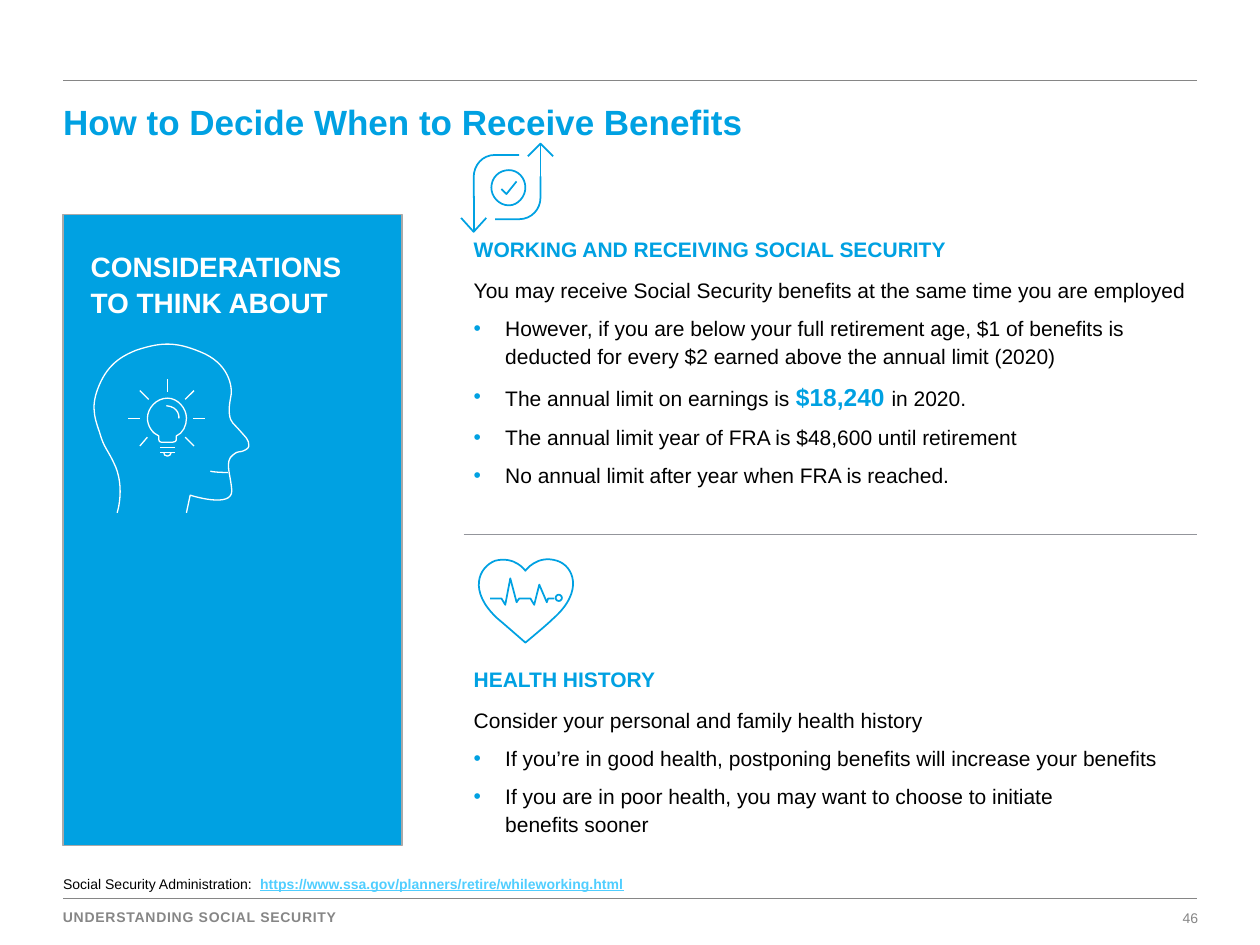
from lxml.etree import SubElement
from pptx import Presentation
from pptx.dml.color import RGBColor
from pptx.enum.shapes import MSO_CONNECTOR, MSO_SHAPE
from pptx.enum.text import MSO_ANCHOR, PP_ALIGN
from pptx.oxml.ns import qn
from pptx.util import Inches, Pt

BLUE, WHITE, BLACK, GRAY = "00A1E2", "FFFFFF", "000000", "868686"
NO_BREAK_SPACE = chr(160)

HEAD = """M 1.81 3.75 C 1.81 3.75 1.71 3.75 1.67 3.74 M 0.93 4.07 C 0.93 4.07 0.99 3.89 0.92 3.71
C 0.85 3.55 0.83 3.57 0.79 3.43 C 0.74 3.29 0.72 3.2 0.8 3.03 C 0.88 2.86 1.01 2.81 1.08 2.78
C 1.29 2.71 1.41 2.71 1.63 2.81 C 1.83 2.91 1.85 3.09 1.83 3.16 C 1.81 3.26 1.82 3.33 1.85 3.36
C 1.89 3.4 1.95 3.47 1.95 3.47 C 1.95 3.47 2.01 3.54 1.95 3.57 C 1.89 3.6 1.9 3.57 1.85 3.61
C 1.78 3.66 1.83 3.76 1.84 3.89 C 1.85 4.04 1.51 3.93 1.51 3.93 C 1.48 4.07 1.48 4.07 1.48 4.07"""
BULB = """M 1.26 3.46 C 1.26 3.49 1.26 3.49 1.26 3.49 C 1.26 3.5 1.27 3.51 1.28 3.51
C 1.37 3.51 1.37 3.51 1.37 3.51 C 1.39 3.51 1.4 3.5 1.4 3.49 C 1.4 3.46 1.4 3.46 1.4 3.46
C 1.4 3.46 1.4 3.46 1.4 3.46 C 1.45 3.44 1.48 3.38 1.48 3.32 C 1.48 3.24 1.41 3.16 1.33 3.16
C 1.24 3.16 1.17 3.24 1.17 3.32 C 1.17 3.38 1.21 3.44 1.26 3.46"""
BULB_TIP = "M 1.3 3.59 C 1.3 3.61 1.31 3.62 1.33 3.62 C 1.34 3.62 1.36 3.61 1.36 3.59"
BULB_GLINT = "M 1.42 3.32 C 1.42 3.32 1.43 3.23 1.32 3.22"
RAYS = [
    (1.53, 3.32, 1.63, 3.32), (1.02, 3.32, 1.11, 3.32), (1.33, 3.01, 1.33, 3.11),
    (1.54, 3.1, 1.47, 3.17), (1.11, 3.1, 1.18, 3.17), (1.54, 3.54, 1.47, 3.47),
    (1.11, 3.54, 1.17, 3.47),
]
BULB_BASE = [(1.39, 3.55, 1.27, 3.55), (1.39, 3.59, 1.27, 3.59)]
ARROWS = """M 4.29 1.14 C 4.29 1.41 4.29 1.41 4.29 1.41 M 4.39 1.24 C 4.29 1.14 4.29 1.14 4.29 1.14
C 4.19 1.24 4.19 1.24 4.19 1.24 M 4.29 1.4 C 4.29 1.57 4.29 1.57 4.29 1.57
C 4.29 1.66 4.22 1.74 4.12 1.74 C 3.93 1.74 3.93 1.74 3.93 1.74
M 3.76 1.84 C 3.76 1.56 3.76 1.56 3.76 1.56 M 3.66 1.73 C 3.76 1.84 3.76 1.84 3.76 1.84
C 3.86 1.73 3.86 1.73 3.86 1.73 M 3.76 1.57 C 3.76 1.41 3.76 1.41 3.76 1.41
C 3.76 1.31 3.83 1.23 3.93 1.23 C 4.12 1.23 4.12 1.23 4.12 1.23"""
CHECK = """M 3.98 1.5 C 4.02 1.54 4.02 1.54 4.02 1.54 C 4.1 1.44 4.1 1.44 4.1 1.44
M 4.17 1.49 C 4.17 1.56 4.11 1.63 4.04 1.63 C 3.96 1.63 3.9 1.56 3.9 1.49
C 3.9 1.41 3.96 1.35 4.04 1.35 C 4.11 1.35 4.17 1.41 4.17 1.49"""
PULSE = """M 3.89 4.75 L 3.98 4.75 L 4.01 4.8 L 4.05 4.59 L 4.1 4.78 L 4.12 4.75 L 4.21 4.75
L 4.24 4.8 L 4.28 4.64 L 4.34 4.78 L 4.35 4.75 L 4.4 4.75"""
HEART = """M 4.17 5.1 C 4.17 5.1 4.34 4.96 4.39 4.91 C 4.64 4.69 4.55 4.49 4.42 4.45
C 4.26 4.4 4.17 4.53 4.17 4.53 C 4.17 4.53 4.09 4.41 3.93 4.45
C 3.8 4.5 3.71 4.69 3.95 4.91 C 4.01 4.96 4.17 5.1 4.17 5.1"""

WORKING = [
    ["However, if you are below your full retirement age, $1 of benefits is deducted "
     "for every $2 earned above the annual limit (2020)"],
    ["The annual limit on earnings is ", ("$18,240 ", dict(size=14, color=BLUE, bold=True)), "in 2020."],
    ["The annual limit year of FRA is $48,600 until retirement"],
    ["No annual limit after year when FRA is reached."],
]
HEALTH = [
    ["If you’re in good health, postponing benefits will increase your benefits"],
    [f"If you are in poor health, you may want to choose to initiate benefits{NO_BREAK_SPACE}sooner"],
]


def rgb(value):
    """Return the colour for a hex string."""
    return RGBColor.from_string(value)


def add_text(paragraph, text, size=12, color=BLACK, bold=False, underline=False, spacing=None):
    """Append a formatted run to a paragraph."""
    run = paragraph.add_run()
    run.text = text
    font = run.font
    font.name, font.size, font.bold = "Arial", Pt(size), bold
    font.color.rgb = rgb(color)
    if underline:
        font.underline = True
    if spacing:
        run._r.get_or_add_rPr().set("spc", str(round(spacing * 100)))


def add_bullet(paragraph):
    """Give a paragraph a blue bullet with a hanging indent."""
    properties = paragraph._p.get_or_add_pPr()
    properties.set("marL", str(Inches(0.25)))
    properties.set("indent", str(-Inches(0.25)))
    color = SubElement(properties, qn("a:buClr"))
    SubElement(color, qn("a:srgbClr"), val=BLUE)
    SubElement(properties, qn("a:buFont"), typeface="Arial")
    SubElement(properties, qn("a:buChar"), char="•")


def read_outline(commands):
    """Turn M, L and C commands into pairs of letter and points."""
    result, tokens = [], iter(commands.split())
    for letter in tokens:
        count = 3 if letter == "C" else 1
        result.append((letter, [tuple(Inches(float(next(tokens))) for _ in "xy") for _ in range(count)]))
    return result


class SlideBuilder:
    """Hold the current slide and draw elements in its style."""

    def __init__(self, slide):
        """Keep the slide to draw on."""
        self.slide = slide
        self.shapes = slide.shapes

    def start_group(self):
        """Send the next elements to a new group."""
        self.shapes = self.slide.shapes.add_group_shape().shapes

    def end_group(self):
        """Send the next elements to the slide."""
        self.shapes = self.slide.shapes

    def frame(self, shape, insets=(0, 0, 0, 0), anchor=MSO_ANCHOR.TOP, wrap=True):
        """Set the text frame layout and return its first paragraph."""
        frame = shape.text_frame
        frame.margin_left, frame.margin_top, frame.margin_right, frame.margin_bottom = map(Inches, insets)
        frame.vertical_anchor, frame.word_wrap = anchor, wrap
        return frame.paragraphs[0]

    def title(self, text, *box):
        """Place and fill the title placeholder."""
        shape = self.slide.shapes.title
        shape.left, shape.top, shape.width, shape.height = map(Inches, box)
        paragraph = self.frame(shape)
        paragraph.alignment = PP_ALIGN.LEFT
        add_text(paragraph, text, size=20, color=BLUE, bold=True)

    def text_box(self, *box, **layout):
        """Add a text box and return its first paragraph."""
        return self.frame(self.shapes.add_textbox(*map(Inches, box)), **layout)

    def line(self, *ends, color=GRAY, width=1):
        """Add a straight line."""
        connector = self.shapes.add_connector(MSO_CONNECTOR.STRAIGHT, *map(Inches, ends))
        connector.line.color.rgb, connector.line.width = rgb(color), Pt(width)
        SubElement(connector._element.spPr, qn("a:effectLst"))

    def style(self, shape, fill, color, width):
        """Set fill and outline without a shadow."""
        shape.shadow.inherit = False
        if fill:
            shape.fill.solid()
            shape.fill.fore_color.rgb = rgb(fill)
        else:
            shape.fill.background()
        shape.line.color.rgb, shape.line.width = rgb(color), Pt(width)

    def shape(self, kind, *box, fill=None, color=BLUE, width=1):
        """Add a preset shape."""
        self.style(self.shapes.add_shape(kind, *map(Inches, box)), fill, color, width)

    def outline(self, commands, color=BLUE, width=1):
        """Add an unfilled freeform with true curves."""
        (_, [start]), *steps = read_outline(commands)
        builder = self.shapes.build_freeform(*start)
        for letter, points in steps:
            if letter == "M":
                builder.move_to(*points[0])
            else:
                builder.add_line_segments(points[-1:], close=False)
        shape = builder.convert_to_shape()
        segments = list(shape._element.iter(qn("a:lnTo")))
        drawn = [step for step in steps if step[0] != "M"]
        for segment, (letter, points) in zip(segments, drawn):
            if letter == "C":
                segment.tag = qn("a:cubicBezTo")
                segment.clear()
                for x, y in points:
                    SubElement(segment, qn("a:pt"), x=str(x - shape.left), y=str(y - shape.top))
        self.style(shape, None, color, width)

    def section(self, top, height, heading, lead, bullets):
        """Add a heading, a lead sentence and its bullets."""
        paragraph = self.text_box(3.71, top, 5.79, height, insets=(0.05, 0, 0.05, 0.05))
        frame = paragraph._parent
        paragraph.line_spacing = 1.2
        add_text(paragraph, heading, color=BLUE, bold=True)
        for index, parts in enumerate([[lead], *bullets]):
            paragraph = frame.add_paragraph()
            paragraph.space_before, paragraph.line_spacing = Pt(6), 1.1 if index else 1.2
            if index:
                add_bullet(paragraph)
            for part in parts:
                text, options = (part, {}) if isinstance(part, str) else part
                add_text(paragraph, text, **options)


def main():
    """Build and save the slide."""
    presentation = Presentation()
    presentation.slide_width, presentation.slide_height = Inches(10), Inches(7.5)
    builder = SlideBuilder(presentation.slides.add_slide(presentation.slide_layouts[5]))
    thin_white = dict(color=WHITE, width=0.75)

    for y in (0.64, 7.13):
        builder.line(0.5, y, 9.5, y)
    number = builder.text_box(9.37, 7.22, 0.14, 0.13, wrap=False)
    number.alignment = PP_ALIGN.RIGHT
    add_text(number, "46", size=8, color=GRAY)
    footer = builder.text_box(0.5, 7.21, 3.1, 0.15)
    add_text(footer, "UNDERSTANDING SOCIAL SECURITY", size=8, color=GRAY, bold=True, spacing=0.4)
    builder.title("How to Decide When to Receive Benefits", 0.5, 0.8, 8.99, 0.34)
    origin = builder.text_box(0.5, 6.78, 8.99, 0.32, insets=(0, 0, 0, 0.02), anchor=MSO_ANCHOR.BOTTOM)
    origin.line_spacing = 0.9
    add_text(origin, "Social Security Administration:  ", size=8)
    add_text(origin, "https://www.ssa.gov/planners/retire/whileworking.html",
             size=8, color="50CEFF", bold=True, underline=True)

    builder.shape(MSO_SHAPE.RECTANGLE, 0.5, 1.7, 2.69, 5.01, fill=BLUE, color="A9A9A9", width=0.75)
    panel = builder.text_box(0.72, 1.95, 2.25, 0.85)
    panel.line_spacing, panel.space_after = 1.1, Pt(3)
    add_text(panel, "CONSIDERATIONS ", size=16, color=WHITE, bold=True)
    panel.add_line_break()
    add_text(panel, "TO THINK ABOUT", size=16, color=WHITE, bold=True)

    builder.start_group()
    for commands in (HEAD, BULB_TIP):
        builder.outline(commands, **thin_white)
    for ends in RAYS:
        builder.line(*ends, **thin_white)
    for commands in (BULB, BULB_GLINT):
        builder.outline(commands, **thin_white)
    for ends in BULB_BASE:
        builder.line(*ends, **thin_white)
    builder.end_group()

    builder.section(1.84, 2.24, "WORKING AND RECEIVING SOCIAL SECURITY",
                    "You may receive Social Security benefits at the same time you are employed", WORKING)
    builder.start_group()
    builder.outline(ARROWS)
    builder.outline(CHECK)
    builder.start_group()
    builder.outline(PULSE)
    builder.shape(MSO_SHAPE.OVAL, 4.41, 4.72, 0.05, 0.05)
    builder.outline(HEART)
    builder.end_group()
    builder.section(5.25, 1.55, "HEALTH HISTORY", "Consider your personal and family health history", HEALTH)
    builder.line(3.68, 4.24, 9.5, 4.24, color="93959B", width=0.5)
    presentation.save("out.pptx")


if __name__ == "__main__":
    main()
